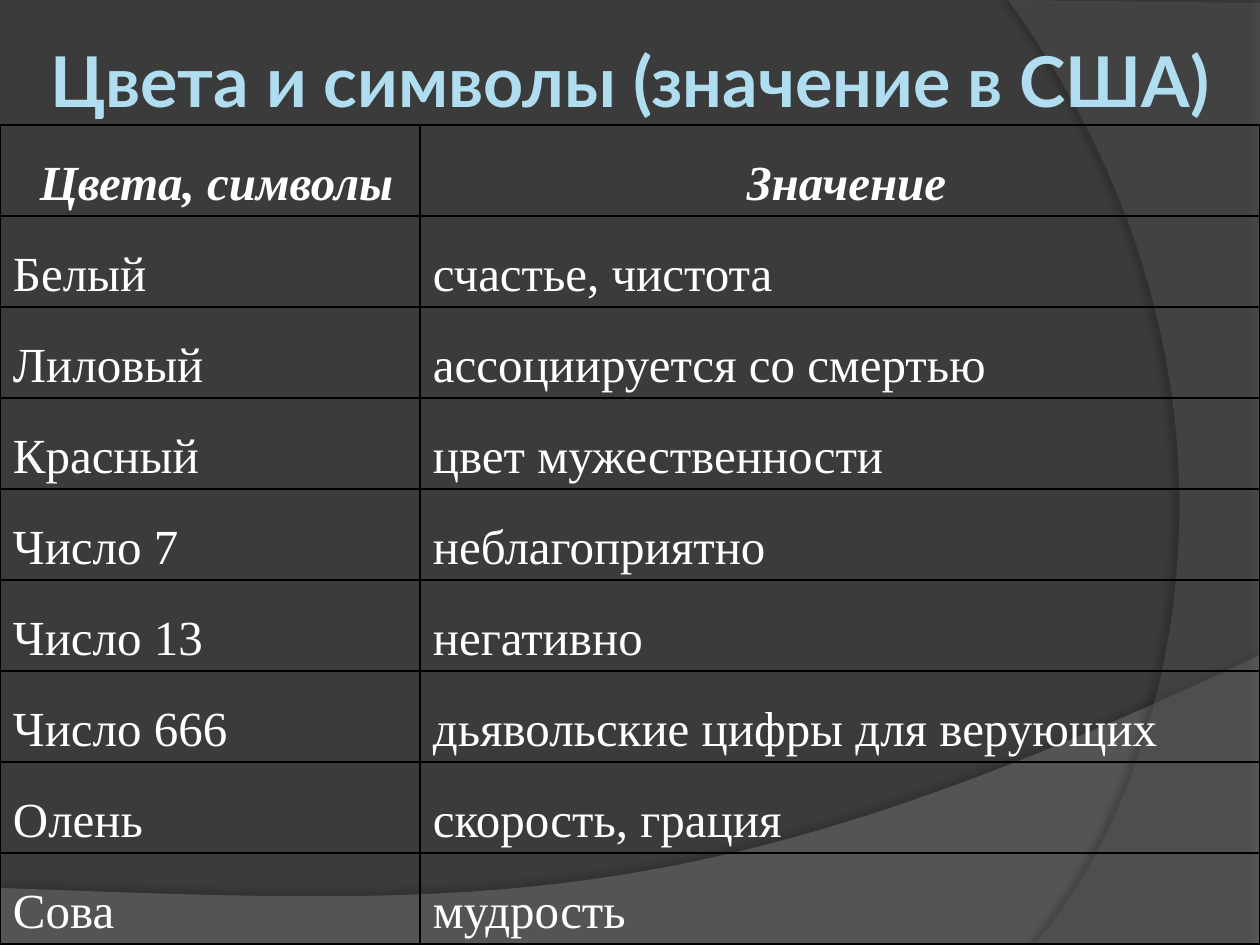
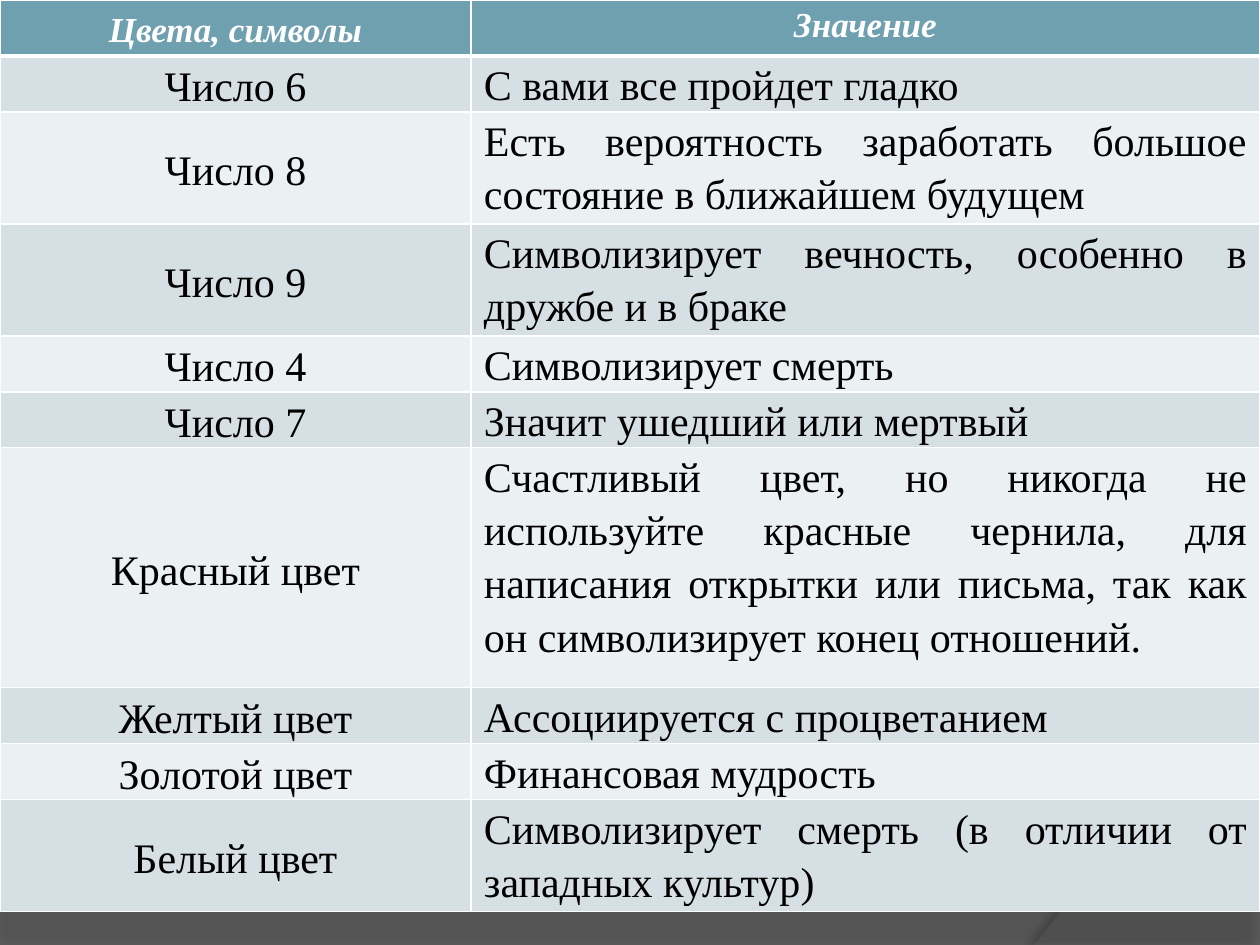
import lxml.etree
import pptx
import pptx.dml.color
import pptx.enum.text
import pptx.oxml.ns
import pptx.util

EMU_PER_PX = 914400 / 126
WIDTH, HEIGHT = 1260, 945
BACKGROUND, WHITE, BLACK = "3B3B3B", "FFFFFF", "000000"
TITLE_FONT, BODY_FONT = "Lato", "Times New Roman"
TITLE_COLOUR = "B0DEF0"
HEADER_FILL, ROW_FILLS = "6EA0B0", ("D5DFE4", "EBF0F2")
INDENT = 13

ALIGN = pptx.enum.text.PP_ALIGN
ANCHOR = pptx.enum.text.MSO_ANCHOR

# Each swoosh: straight corners, then a curve (two controls and an end)
# that starts at the last corner.
SWOOSHES = [
    {"corners": [(0, 888), (0, 945), (1260, 945), (1260, 655)],
     "curve": [(704, 919), (493, 906), (0, 888)],
     "fill": "7F7F7F", "opacity": 45,
     "shadow": {"opacity": 35, "distance": 3.5, "angle": 270}},
    {"corners": [(1260, 3), (1260, 945), (1034, 945)],
     "curve": [(1178, 780), (1283, 378), (1008, 0)],
     "fill": "5E5E5E", "opacity": 40,
     "shadow": {"opacity": 45, "distance": 4, "angle": 180}},
]

USA_TITLE = "Цвета и символы (значение в США)"
HEADER = ("Цвета, символы", "Значение")
USA_ROWS = [
    HEADER,
    ("Белый", "счастье, чистота"),
    ("Лиловый", "ассоциируется со смертью"),
    ("Красный", "цвет мужественности"),
    ("Число 7", "неблагоприятно"),
    ("Число 13", "негативно"),
    ("Число 666", "дьявольские цифры для верующих"),
    ("Олень", "скорость, грация"),
    ("Сова", "мудрость"),
]
CHINA_ROWS = [
    HEADER,
    ("Число 6", "С вами все пройдет гладко"),
    ("Число 8", "Есть вероятность заработать большое состояние в ближайшем будущем"),
    ("Число 9", "Символизирует вечность, особенно в дружбе и в браке"),
    ("Число 4", "Символизирует смерть"),
    ("Число 7", "Значит ушедший или мертвый"),
    ("Красный цвет", "Счастливый цвет, но никогда не используйте красные чернила, "
                     "для написания открытки или письма, так как он символизирует "
                     "конец отношений."),
    ("Желтый цвет", "Ассоциируется с процветанием"),
    ("Золотой цвет", "Финансовая мудрость"),
    ("Белый цвет", "Символизирует смерть (в отличии от западных культур)"),
]
CHINA_HEIGHTS = [56, 56, 112, 112, 56, 56, 240, 56, 56, 112]


def px(n):
    return pptx.util.Emu(round(n * EMU_PER_PX))


def rgb(colour):
    return pptx.dml.color.RGBColor.from_string(colour)


def add_xml(parent, tag, **attributes):
    child = lxml.etree.SubElement(parent, pptx.oxml.ns.qn(tag))
    for name, value in attributes.items():
        child.set(name, str(value))
    return child


def curve_points(start, c1, c2, end, steps=60):
    """Points along a cubic Bezier curve, without its start."""
    for i in range(1, steps + 1):
        t = i / steps
        weights = ((1 - t) ** 3, 3 * t * (1 - t) ** 2, 3 * t * t * (1 - t), t ** 3)
        yield tuple(sum(w * p[axis] for w, p in zip(weights, (start, c1, c2, end)))
                    for axis in (0, 1))


def add_swoosh(s, corners, curve, fill, opacity, shadow):
    points = corners + list(curve_points(corners[-1], *curve))
    points = [(px(x), px(y)) for x, y in points]
    builder = s.shapes.build_freeform(*points[0])
    builder.add_line_segments(points[1:], close=True)
    sp = builder.convert_to_shape()
    sp.fill.solid()
    sp.fill.fore_color.rgb = rgb(fill)
    sp.line.fill.background()
    sp.shadow.inherit = False
    sp_pr = sp.element.spPr
    colour = sp_pr.find(".//" + pptx.oxml.ns.qn("a:srgbClr"))
    add_xml(colour, "a:alpha", val=opacity * 1000)
    outer = add_xml(sp_pr.find(pptx.oxml.ns.qn("a:effectLst")), "a:outerShdw",
                    blurRad=pptx.util.Pt(4), dist=pptx.util.Pt(shadow["distance"]),
                    dir=shadow["angle"] * 60000, algn="ctr", rotWithShape=0)
    add_xml(add_xml(outer, "a:srgbClr", val=BLACK), "a:alpha",
            val=shadow["opacity"] * 1000)
    return sp


def set_up_master(prs, s):
    """Give the master its background; swooshes are drawn on s, then moved there."""
    master = prs.slide_master
    master.background.fill.solid()
    master.background.fill.fore_color.rgb = rgb(BACKGROUND)
    first = master.placeholders[0].element
    for swoosh in SWOOSHES:
        first.addprevious(add_swoosh(s, **swoosh).element)


def set_borders(cell, colour, top=1, bottom=1):
    tc_pr = cell._tc.get_or_add_tcPr()
    for tag, width in (("a:lnL", 1), ("a:lnR", 1), ("a:lnT", top), ("a:lnB", bottom)):
        line = add_xml(tc_pr, tag, w=pptx.util.Pt(width))
        add_xml(add_xml(line, "a:solidFill"), "a:srgbClr", val=colour)


def fill_cell(cell, colour):
    if colour:
        cell.fill.solid()
        cell.fill.fore_color.rgb = rgb(colour)
    else:
        cell.fill.background()


def write_cell(cell, text, size, colour, align, spacing, indents, header):
    cell.margin_left = cell.margin_right = cell.margin_top = cell.margin_bottom = 0
    p = cell.text_frame.paragraphs[0]
    p.text = text
    p.alignment = align
    p.line_spacing = spacing
    for name in indents:
        p._p.get_or_add_pPr().set(name, str(px(INDENT)))
    p.font.name, p.font.size = BODY_FONT, pptx.util.Pt(size)
    p.font.bold = p.font.italic = header
    p.font.color.rgb = rgb(colour)


def add_plain_table(s, rows, top, widths, heights):
    table = s.shapes.add_table(len(rows), len(widths), 0, px(top),
                               px(sum(widths)), px(sum(heights))).table
    table.first_row = table.horz_banding = False
    for column, width in zip(table.columns, widths):
        column.width = px(width)
    for row, height in zip(table.rows, heights):
        row.height = px(height)
    return table


def add_usa_table(s):
    table = add_plain_table(s, USA_ROWS, 125, [420, 840], [91] * len(USA_ROWS))
    for i, row in enumerate(USA_ROWS):
        for j, text in enumerate(row):
            cell = table.cell(i, j)
            set_borders(cell, BLACK)
            fill_cell(cell, None)
            cell.vertical_anchor = ANCHOR.MIDDLE
            write_cell(cell, text, 28, WHITE, ALIGN.LEFT if i else ALIGN.CENTER,
                       1.5, ["indent"], header=i == 0)


def add_china_table(s):
    table = add_plain_table(s, CHINA_ROWS, 0, [471, 789], CHINA_HEIGHTS)
    for i, row in enumerate(CHINA_ROWS):
        for j, text in enumerate(row):
            cell = table.cell(i, j)
            set_borders(cell, WHITE, top=3 if i == 1 else 1, bottom=1 if i else 3)
            fill_cell(cell, ROW_FILLS[(i - 1) % 2] if i else HEADER_FILL)
            cell.vertical_anchor = ANCHOR.TOP if j else ANCHOR.MIDDLE
            write_cell(cell, text, 24 if i else 20, BLACK if i else WHITE,
                       ALIGN.JUSTIFY if i and j else ALIGN.CENTER,
                       1.15, ["marL", "marR"], header=i == 0)


def set_title(s, text):
    title = s.shapes.title
    title.left, title.top, title.width, title.height = 0, 0, px(WIDTH), px(158)
    tf = title.text_frame
    tf.text = text
    tf.word_wrap = True
    tf.auto_size = pptx.enum.text.MSO_AUTO_SIZE.NONE
    tf.vertical_anchor = ANCHOR.MIDDLE
    tf.margin_left = tf.margin_right = tf.margin_top = tf.margin_bottom = px(6)
    p = tf.paragraphs[0]
    p.alignment = ALIGN.CENTER
    p.font.name, p.font.size, p.font.bold = TITLE_FONT, pptx.util.Pt(40), True
    p.font.color.rgb = rgb(TITLE_COLOUR)


def main():
    prs = pptx.Presentation()
    prs.slide_width, prs.slide_height = px(WIDTH), px(HEIGHT)
    title_only, blank = prs.slide_layouts[5], prs.slide_layouts[6]

    s = prs.slides.add_slide(title_only)
    set_up_master(prs, s)
    set_title(s, USA_TITLE)
    add_usa_table(s)

    add_china_table(prs.slides.add_slide(blank))
    prs.save("out.pptx")


if __name__ == "__main__":
    main()
